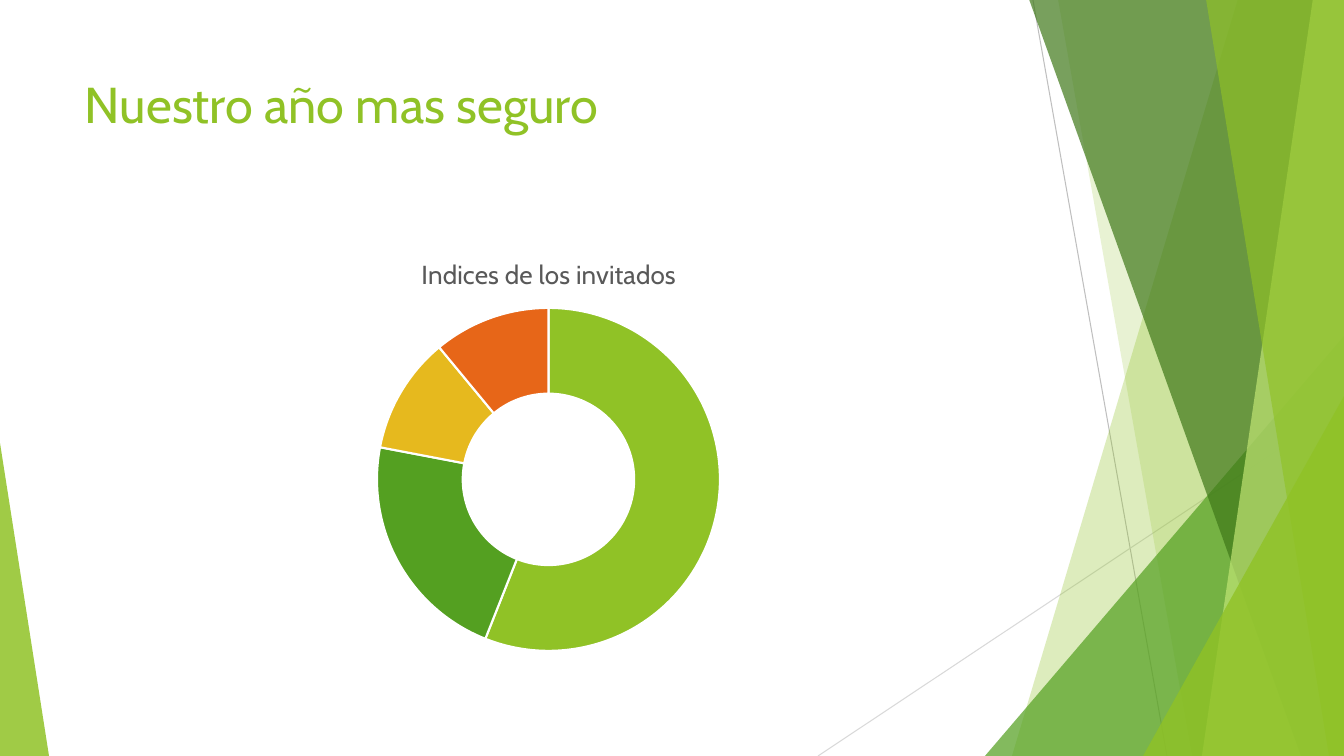
from lxml import etree
from pptx import Presentation
from pptx.chart.data import CategoryChartData
from pptx.dml.color import RGBColor
from pptx.enum.chart import XL_CHART_TYPE
from pptx.enum.shapes import MSO_CONNECTOR, MSO_SHAPE
from pptx.enum.text import MSO_ANCHOR
from pptx.oxml import parse_xml
from pptx.oxml.ns import nsdecls, qn
from pptx.util import Emu, Pt

DOUGHNUT = XL_CHART_TYPE.DOUGHNUT
STRAIGHT = MSO_CONNECTOR.STRAIGHT
TRIANGLE = MSO_SHAPE.ISOSCELES_TRIANGLE
TOP = MSO_ANCHOR.TOP

# Content
FONT = "Cabin"
COLORS = {
    "lime": "90C226", "green": "54A021", "dark": "3F7819", "pale": "C0E474",
    "yellow": "E6B91E", "orange": "E76618", "white": "FFFFFF",
    "caption": "595959", "gray": "BFBFBF", "light gray": "D9D9D9",
}
HEADING = "Nuestro año mas seguro"
HEADING_BOX = (75, 68, 948, 145)
CHART_TITLE = "Indices de los invitados"
CHART_BOX = (75, 238, 948, 427)
RING_BOX = (377, 308, 343, 343)
GUESTS = [("1", 56, "lime"), ("2", 22, "green"),
          ("3", 11, "yellow"), ("4", 11, "orange")]

# Decoration, in px
WIDTH, HEIGHT, BLEED = 1344, 756, -1
RAYS = [((1033, 0), (1167, HEIGHT), "gray"),
        ((WIDTH, 406), (818, HEIGHT), "light gray")]
# Bands reach the right edge: (top left x, bottom left x, color, opacity %)
BACK_BANDS = [(1238, 1012, "lime", 30), (1058, 1192, "lime", 20)]
FRONT_BANDS = [(1029, 1301, "dark", 70), (1313, 1202, "pale", 70),
               (1206, 1329, "lime", 65)]
# Wedges stand on the bottom edge: (left, top, width, apex, color, opacity %)
BACK_WEDGES = [(985, 336, 359, 1, "green", 72)]
FRONT_WEDGES = [(1143, 396, 201, 1, "lime", 80), (0, 443, 49, 0, "lime", 85)]

SLIDE_WIDTH = 12192000
SCALE = SLIDE_WIDTH / WIDTH


def px(*lengths):
    return [Emu(round(length * SCALE)) for length in lengths]


def rgb(name):
    return RGBColor.from_string(COLORS[name])


def write(frame, text, size, color):
    run = frame.paragraphs[0].add_run()
    run.text = text
    run.font.name = FONT
    run.font.size = Pt(size)
    run.font.bold = False
    run.font.color.rgb = rgb(color)


def paint(shape, color, opacity):
    shape.shadow.inherit = False
    shape.line.fill.background()
    shape.fill.solid()
    shape.fill.fore_color.rgb = rgb(color)
    tint = shape._element.spPr.find(qn("a:solidFill"))[0]
    etree.SubElement(tint, qn("a:alpha"), val=str(opacity * 1000))


def add_rays(shapes):
    for start, end, color in RAYS:
        ray = shapes.add_connector(STRAIGHT, *px(*start, *end))
        ray.line.color.rgb = rgb(color)
        ray.line.width = Pt(0.75)
        etree.SubElement(ray._element.spPr, qn("a:effectLst"))


def add_bands(shapes, bands):
    for top_x, bottom_x, color, opacity in bands:
        outline = shapes.build_freeform(top_x, BLEED, scale=SCALE)
        outline.add_line_segments(
            [(WIDTH, BLEED), (WIDTH, HEIGHT), (bottom_x, HEIGHT)], close=True)
        paint(outline.convert_to_shape(), color, opacity)


def add_wedges(shapes, wedges):
    for left, top, width, apex, color, opacity in wedges:
        wedge = shapes.add_shape(TRIANGLE, *px(left, top, width, HEIGHT - top))
        wedge.adjustments[0] = apex
        paint(wedge, color, opacity)


def add_heading(shapes):
    heading = shapes.add_textbox(*px(*HEADING_BOX)).text_frame
    heading.word_wrap = True
    heading.vertical_anchor = TOP
    write(heading, HEADING, size=36, color="lime")


def add_guest_chart(shapes):
    data = CategoryChartData()
    data.categories = [category for category, _, _ in GUESTS]
    data.add_series("Series 1", [value for _, value, _ in GUESTS])
    chart = shapes.add_chart(DOUGHNUT, *px(*CHART_BOX), data).chart
    chart.has_legend = False
    chart.font.name = FONT
    chart.font.size = Pt(10)
    chart.has_title = True
    write(chart.chart_title.text_frame, CHART_TITLE, size=18.6, color="caption")
    chart.chart_title.include_in_layout = False

    plot = chart.plots[0]
    plot.vary_by_categories = True
    plot._element.find(qn("c:holeSize")).set("val", "75")
    for index, (_, _, color) in enumerate(GUESTS):
        slice_format = plot.series[0].points[index].format
        slice_format.fill.solid()
        slice_format.fill.fore_color.rgb = rgb(color)
        slice_format.line.color.rgb = rgb("white")
        slice_format.line.width = Pt(1.5)

    # Ring position as fractions of the chart
    left, top, width, height = CHART_BOX
    ring_left, ring_top, ring_width, ring_height = RING_BOX
    fractions = {"x": (ring_left - left) / width, "y": (ring_top - top) / height,
                 "w": ring_width / width, "h": ring_height / height}
    sizes = "".join(f'<c:{side} val="{part:.4f}"/>'
                    for side, part in fractions.items())
    layout = parse_xml(
        f'<c:layout {nsdecls("c")}><c:manualLayout><c:layoutTarget val="inner"/>'
        f'<c:xMode val="edge"/><c:yMode val="edge"/>{sizes}'
        '</c:manualLayout></c:layout>')
    area = plot._element.getparent()
    for automatic in area.findall(qn("c:layout")):
        area.remove(automatic)
    area.insert(0, layout)


def main():
    deck = Presentation()
    deck.slide_width, deck.slide_height = px(WIDTH, HEIGHT)
    shapes = deck.slides.add_slide(deck.slide_layouts[6]).shapes

    # Background, back to front
    add_rays(shapes)
    add_bands(shapes, BACK_BANDS)
    add_wedges(shapes, BACK_WEDGES)
    add_bands(shapes, FRONT_BANDS)
    add_wedges(shapes, FRONT_WEDGES)

    # Foreground
    add_heading(shapes)
    add_guest_chart(shapes)
    deck.save("out.pptx")


if __name__ == "__main__":
    main()
